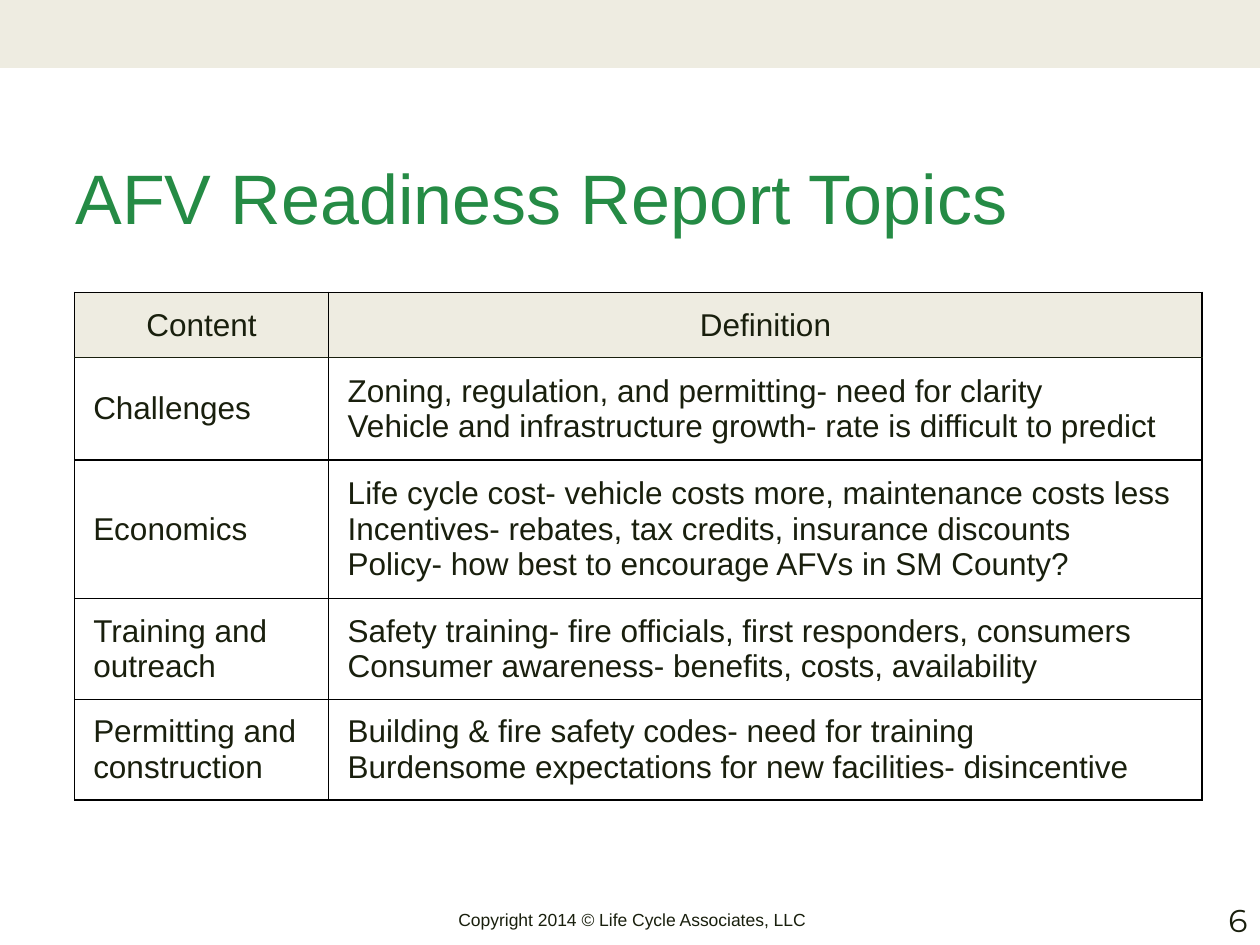
from lxml.etree import SubElement
from pptx import Presentation
from pptx.dml.color import RGBColor
from pptx.enum.shapes import MSO_SHAPE
from pptx.enum.text import MSO_ANCHOR, PP_ALIGN
from pptx.oxml.ns import qn
from pptx.util import Inches, Pt

COLORS = {"band": "EEECE1", "ink": "191F0D", "title": "258B45", "rule": "000000"}
UNIT = 0.1  # grid of 100 columns by 75 rows

HEADINGS = ("Content", "Definition")
TOPICS = [
    ("Challenges",
     "Zoning, regulation, and permitting- need for clarity\n"
     "Vehicle and infrastructure growth- rate is difficult to predict"),
    ("Economics",
     "Life cycle cost- vehicle costs more, maintenance costs less\n"
     "Incentives- rebates, tax credits, insurance discounts\n"
     "Policy- how best to encourage AFVs in SM County?"),
    ("Training and outreach",
     "Safety training- fire officials, first responders, consumers\n"
     "Consumer awareness- benefits, costs, availability"),
    ("Permitting and construction",
     "Building & fire safety codes- need for training\n"
     "Burdensome expectations for new facilities- disincentive"),
]


def grid(*counts):
    return [Inches(count * UNIT) for count in counts]


def color(name):
    return RGBColor.from_string(COLORS[name])


class TopicSlide:
    def __init__(self, deck):
        self.slide = deck.slides.add_slide(deck.slide_layouts[5])

    def style(self, frame, size, ink="ink", font="Arial", align=PP_ALIGN.LEFT):
        for paragraph in frame.paragraphs:
            paragraph.alignment = align
            for run in paragraph.runs:
                run.font.size = Pt(size)
                run.font.name = font
                run.font.color.rgb = color(ink)

    def band(self, *box):
        band = self.slide.shapes.add_shape(MSO_SHAPE.RECTANGLE, *grid(*box))
        band.shadow.inherit = False
        band.fill.solid()
        band.fill.fore_color.rgb = color("band")
        band.line.fill.background()

    def title(self, text, *box):
        title = self.slide.shapes.title
        title.left, title.top, title.width, title.height = grid(*box)
        title.text_frame.text = text
        title.text_frame.vertical_anchor = MSO_ANCHOR.MIDDLE
        self.style(title.text_frame, 40, "title")

    def label(self, text, *box, wrap=True, **look):
        frame = self.slide.shapes.add_textbox(*grid(*box)).text_frame
        frame.text = text
        frame.word_wrap = wrap
        frame.vertical_anchor = MSO_ANCHOR.BOTTOM
        self.style(frame, **look)

    def borders(self, cell, top, bottom):
        sides = {"L": ("rule", 0.75), "R": ("rule", 0.75), "T": top, "B": bottom}
        properties = cell._tc.get_or_add_tcPr()
        for position, (side, (ink, width)) in enumerate(sides.items()):
            line = SubElement(properties, qn(f"a:ln{side}"), w=str(Pt(width)))
            fill = SubElement(line, qn("a:solidFill"))
            SubElement(fill, qn("a:srgbClr"), val=COLORS[ink])
            properties.insert(position, line)

    def table(self, rows, left, top, columns, heights):
        table = self.slide.shapes.add_table(
            len(rows), len(columns),
            *grid(left, top, sum(columns), sum(heights))).table
        for column, width in zip(table.columns, grid(*columns)):
            column.width = width
        for row, height in zip(table.rows, grid(*heights)):
            row.height = height
        outer, under_header = ("rule", 1), ("ink", 0.5)
        for r, texts in enumerate(rows):
            header = r == 0
            for c, text in enumerate(texts):
                cell = table.cell(r, c)
                cell.text_frame.text = text
                cell.vertical_anchor = MSO_ANCHOR.MIDDLE
                cell.margin_left = cell.margin_right = Inches(0.1 if header else 0.15)
                cell.margin_top = cell.margin_bottom = Inches(0.05 if header else 0.1)
                if header:
                    cell.fill.solid()
                    cell.fill.fore_color.rgb = color("band")
                else:
                    cell.fill.background()
                self.style(cell.text_frame, 18,
                           align=PP_ALIGN.CENTER if header else PP_ALIGN.LEFT)
                self.borders(cell, under_header if r == 1 else outer,
                             under_header if header else outer)


def main():
    deck = Presentation()
    deck.slide_width, deck.slide_height = grid(100, 75)
    page = TopicSlide(deck)

    # Top band and title
    page.band(0, 0, 100, 5.4)
    page.title("AFV Readiness Report Topics", 5, 11.8, 90, 7.6)

    # Topics and their definitions
    page.table([HEADINGS, *TOPICS], 5.9, 23.2,
               columns=(20.2, 69.3), heights=(5.2, 8.1, 11, 8, 8))

    # Footer
    page.label("Copyright 2014 © Life Cycle Associates, LLC",
               35.4, 71.6, 29.6, 2.7, wrap=False, size=10)
    page.label("6", 76.7, 70, 23.3, 5, size=18, font="Montserrat",
               align=PP_ALIGN.RIGHT)

    deck.save("out.pptx")


if __name__ == "__main__":
    main()
